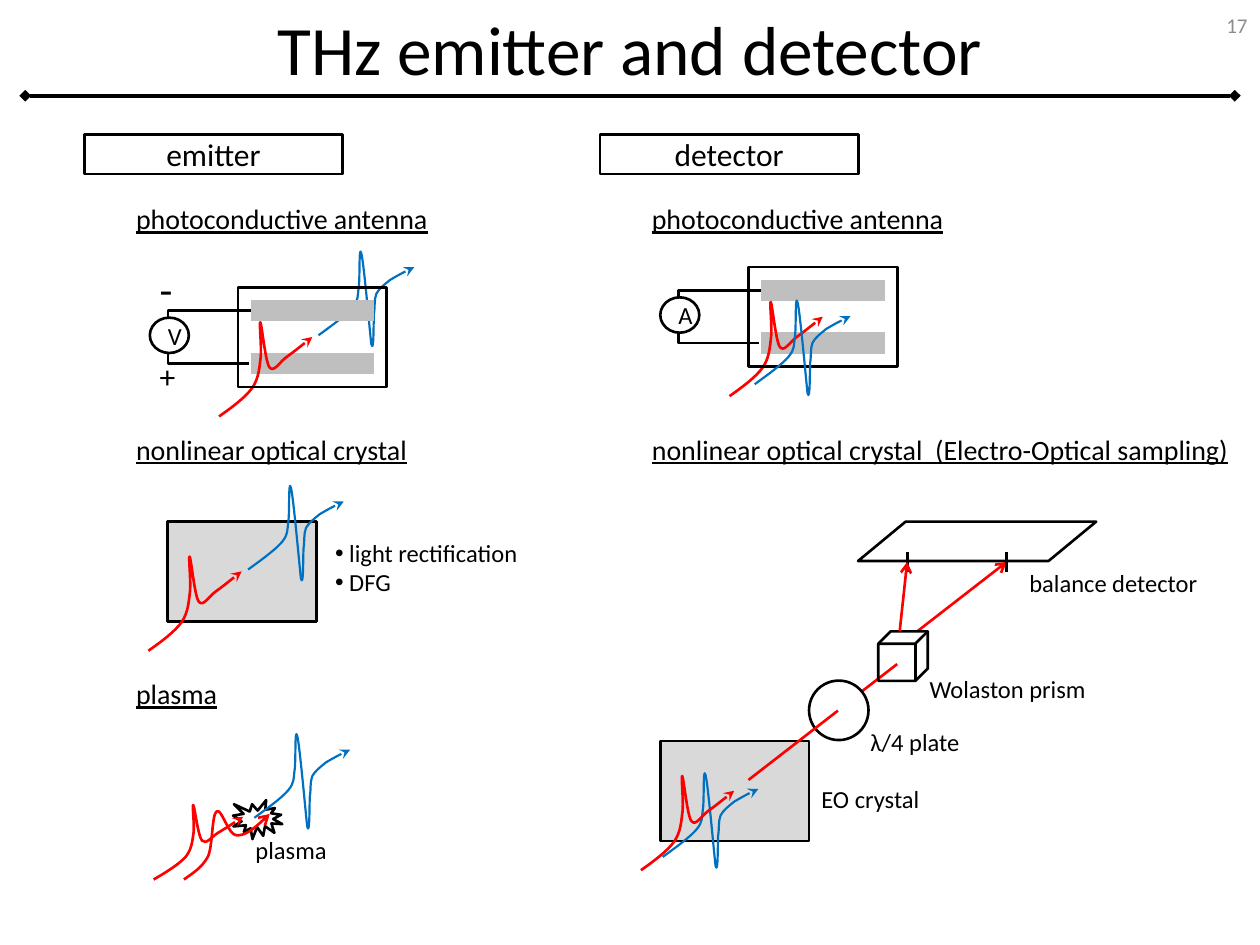
from lxml import etree
from pptx import Presentation
from pptx.dml.color import RGBColor
from pptx.enum import shapes, text
from pptx.oxml.ns import qn
from pptx.util import Pt

BLACK = RGBColor(0x00, 0x00, 0x00)
WHITE = RGBColor(0xFF, 0xFF, 0xFF)
RED = RGBColor(0xFF, 0x00, 0x00)
BLUE = RGBColor(0x00, 0x70, 0xC0)
PLATE_GRAY = RGBColor(0xBF, 0xBF, 0xBF)
CRYSTAL_GRAY = RGBColor(0xD9, 0xD9, 0xD9)
NUMBER_GRAY = RGBColor(0x8C, 0x8C, 0x8C)
FONT = "Calibri"
MSO = shapes.MSO_SHAPE
LEFT, CENTER, RIGHT = text.PP_ALIGN.LEFT, text.PP_ALIGN.CENTER, text.PP_ALIGN.RIGHT

# Pulse curves: cubic Bezier points in points, relative to the start
LASER = [(0, 0), (7.5, -5.3), (15, -10.8), (19.2, -16.6), (22.8, -22.3), (23, -27.7),
         (23.8, -33.8), (24.4, -40), (22.8, -54.6), (23.6, -53.8), (24.4, -53),
         (26.4, -31.4), (28.8, -28.1), (31.2, -24.8), (34.6, -31), (38.4, -33.8),
         (42.3, -36.6), (47.8, -41), (53.3, -45.4)]
THZ = [(0, 0), (7.9, -5.8), (15.5, -11.2), (19.4, -15.8), (23, -20.2), (22.3, -22.3),
       (23, -27.4), (23.8, -32.4), (23, -52.6), (24.5, -46.8), (25.9, -41.8),
       (29.5, -0.7), (30.2, 5), (31.7, 10.8), (31.4, -7.2), (31.7, -12.2),
       (32.4, -16.6), (31.7, -20.2), (33.1, -23.8), (34.6, -26.6), (37.4, -28.8),
       (41, -31.7), (44.6, -33.8), (49.7, -36.7), (54.7, -38.9)]
HARMONIC = [(0, 0), (5, -3.6), (10.1, -6.5), (13.7, -13), (16.6, -19.4), (15.8, -36.7),
            (18.7, -38.9), (21.6, -41), (25.2, -25.2), (30.2, -25.2), (35.3, -25.2),
            (42.5, -31), (49, -37.4)]
EMITTED = (46, 27.4)  # start of the outgoing THz pulse within a device
DEVICE_W, DEVICE_H = 85, 57


def set_text(sp, content, size, color=BLACK, align=LEFT, underline=None):
    tf = sp.text_frame
    tf.text = content
    for p in tf.paragraphs:
        p.alignment = align
        for r in p.runs:
            f = r.font
            f.name, f.size, f.underline = FONT, Pt(size), underline
            f.color.rgb = color
    return tf


def label(s, box, content, size=14, **style):
    sp = s.shapes.add_textbox(*map(Pt, box))
    tf = set_text(sp, content, size, **style)
    tf.word_wrap = True
    return tf


def shape(s, kind, box, fill=None, line=BLACK):
    sp = s.shapes.add_shape(kind, *map(Pt, box))
    sp.shadow.inherit = False
    if fill is None:
        sp.fill.background()
    else:
        sp.fill.solid()
        sp.fill.fore_color.rgb = fill
    if line is None:
        sp.line.fill.background()
    else:
        sp.line.color.rgb, sp.line.width = line, Pt(1.5)
    return sp


def line_end(sp, end, kind):
    etree.SubElement(sp.line._get_or_add_ln(), qn("a:" + end), type=kind)


def connector(s, start, end, color=BLACK, width=1.5, head=None, tail=None,
              kind=shapes.MSO_CONNECTOR.STRAIGHT):
    cx = s.shapes.add_connector(kind, *map(Pt, (*start, *end)))
    cx.line.color.rgb, cx.line.width = color, Pt(width)
    for name, value in (("headEnd", head), ("tailEnd", tail)):
        if value:
            line_end(cx, name, value)
    etree.SubElement(cx._element.spPr, qn("a:effectLst"))
    return cx


def pulse(s, curve, x, y, color=RED, width=1.5, scale=(1, 1), tail="stealth"):
    points = [(Pt(x + dx * scale[0]), Pt(y + dy * scale[1])) for dx, dy in curve]
    fb = s.shapes.build_freeform(*points[0])
    fb.add_line_segments(points[1:], close=False)
    sp = fb.convert_to_shape()
    sp.shadow.inherit = False
    sp.fill.background()
    sp.line.color.rgb, sp.line.width = color, Pt(width)
    line_end(sp, "tailEnd", tail)
    # Turn each three line segments into one cubic curve
    outline = next(sp._element.iter(qn("a:path")))
    segments = outline.findall(qn("a:lnTo"))
    for i in range(0, len(segments), 3):
        cubic = etree.SubElement(outline, qn("a:cubicBezTo"))
        for seg in segments[i:i + 3]:
            cubic.append(seg[0])
            outline.remove(seg)


def thz(s, x, y):
    pulse(s, THZ, x, y, BLUE, 1.25)


def header(s):
    connector(s, (14.4, 54.7), (705.6, 54.7), width=2.25, head="diamond", tail="diamond")
    title = s.shapes.title
    title.left, title.top, title.width, title.height = map(Pt, (0, 0, 720, 54.7))
    tf = set_text(title, "THz emitter and detector", 39.6, align=CENTER)
    tf.vertical_anchor = text.MSO_ANCHOR.MIDDLE
    tf.auto_size = text.MSO_AUTO_SIZE.NONE
    tf = label(s, (552.2, 0, 167.8, 28.8), "17", 12, color=NUMBER_GRAY, align=RIGHT)
    tf.vertical_anchor = text.MSO_ANCHOR.MIDDLE


def column_heads(s, x, name, headings):
    sp = shape(s, MSO.RECTANGLE, (x, 77, 147.6, 22.5))
    set_text(sp, name, 18, align=CENTER)
    for y, heading, width in headings:
        label(s, (x + 22.5, y, width, 26.6), heading, 16, underline=True)


def antenna(s, x, y, meter):
    plates = [shape(s, MSO.FLOWCHART_PROCESS, (x + 7.2, y + dy, 70.6, 12.2), PLATE_GRAY, None)
              for dy in (7.2, 37.4)]
    # Wire loop from plate to plate, bent 47.5 pt to the left
    wire = connector(s, (x + 7.2, y + 13.3), (x + 6.2, y + 43.5),
                     kind=shapes.MSO_CONNECTOR.ELBOW)
    guides = next(wire._element.iter(qn("a:avLst")))
    etree.SubElement(guides, qn("a:gd"), name="adj1", fmla="val 4750000")
    sp = shape(s, MSO.OVAL, (x - 50.4, y + 17.3, 22.3, 20.2), WHITE)
    set_text(sp, meter, 14, align=CENTER)
    pulse(s, LASER, x - 10.8, y + 73.8)
    shape(s, MSO.FLOWCHART_PROCESS, (x, y, DEVICE_W, DEVICE_H))


def crystal(s, x, y, thz_start):
    shape(s, MSO.FLOWCHART_PROCESS, (x, y, DEVICE_W, DEVICE_H), CRYSTAL_GRAY)
    thz(s, x + thz_start[0], y + thz_start[1])
    pulse(s, LASER, x - 11, y + 73.8)


def effects_list(s, box):
    body = s.placeholders[1]
    body.left, body.top, body.width, body.height = map(Pt, box)
    tf = set_text(body, " light rectification\n DFG", 14)
    tf.auto_size = text.MSO_AUTO_SIZE.NONE
    for p in tf.paragraphs:
        p.space_before = Pt(0)
        pPr = p._p.get_or_add_pPr()
        pPr.set("marL", "0")
        pPr.set("indent", "0")
        etree.SubElement(pPr, qn("a:buFont"), typeface="Arial")
        etree.SubElement(pPr, qn("a:buChar"), char="•")


def plasma(s, x, y):
    shape(s, MSO.EXPLOSION1, (x + 45.4, y - 45.4, 28.1, 22.3))
    pulse(s, LASER, x, y, scale=(0.96, 0.79))
    pulse(s, HARMONIC, x + 17.3, y, tail="arrow")
    thz(s, x + 57.6, y - 35.3)
    label(s, (x + 51.1, y - 28.8, 90.7, 24.5), "plasma")


def sampling(s, x, y):
    """Electro-optical sampling, with its top left at the EO crystal's left and detector's top."""
    def at(dx, dy):
        return x + dx, y + dy

    # Balance detector and the beam that passes behind the prism
    shape(s, MSO.FLOWCHART_DATA, (*at(113, 0), 136.1, 22.5), WHITE)
    connector(s, at(146.8, 62.7), at(198, 23), RED, tail="arrow")
    crystal(s, *at(0, 125.4), (1.4, 66.2))
    # Quarter-wave plate and Wollaston prism
    connector(s, at(100, 108.7), at(135.4, 81.4), RED)
    shape(s, MSO.FLOWCHART_CONNECTOR, (*at(85, 90.8), 34, 34), WHITE)
    connector(s, at(50.4, 147.6), at(101.5, 108), RED)
    shape(s, MSO.CUBE, (*at(124.6, 62.7), 28.3, 28.3))
    # Detector marks and second beam
    for dx in (141.1, 198):
        connector(s, at(dx, 17.3), at(dx, 28.8))
    connector(s, at(136.8, 62.7), at(141.1, 23), RED, tail="arrow")
    for dx, dy, width, name in ((113, 113.8, 90.7, "λ/4 plate"),
                                (146.8, 83.5, 124.6, "Wolaston prism"),
                                (203.8, 23, 124.6, "balance detector"),
                                (85, 146.2, 90.7, "EO crystal")):
        label(s, (*at(dx, dy), width, 24.5), name)


def main():
    prs = Presentation()
    prs.slide_width, prs.slide_height = Pt(720), Pt(540)
    s = prs.slides.add_slide(prs.slide_layouts[1])
    header(s)

    # Emitter column
    column_heads(s, 48.2, "emitter", [(111.6, "photoconductive antenna", 221),
                                      (243.4, "nonlinear optical crystal", 221),
                                      (383, "plasma", 221)])
    x, y = 136, 164.2
    thz(s, x + EMITTED[0], y + EMITTED[1])
    antenna(s, x, y, "V")
    label(s, (84.2, 146.9, 23.8, 38.2), "-", 24)
    label(s, (84.2, 200.2, 23.8, 31), "+", 18)
    crystal(s, 95.8, 298.1, EMITTED)
    effects_list(s, (184.3, 303.8, 141.8, 41))
    plasma(s, 87.8, 502.6)

    # Detector column
    column_heads(s, 342.9, "detector", [
        (111.6, "photoconductive antenna", 221),
        (243.4, "nonlinear optical crystal  (Electro-Optical sampling)", 354.3)])
    x, y = 427.7, 152.6
    antenna(s, x, y, "A")
    thz(s, x + 3.6, y + 67)
    sampling(s, 377.3, 298.1)

    prs.save("out.pptx")


if __name__ == "__main__":
    main()
